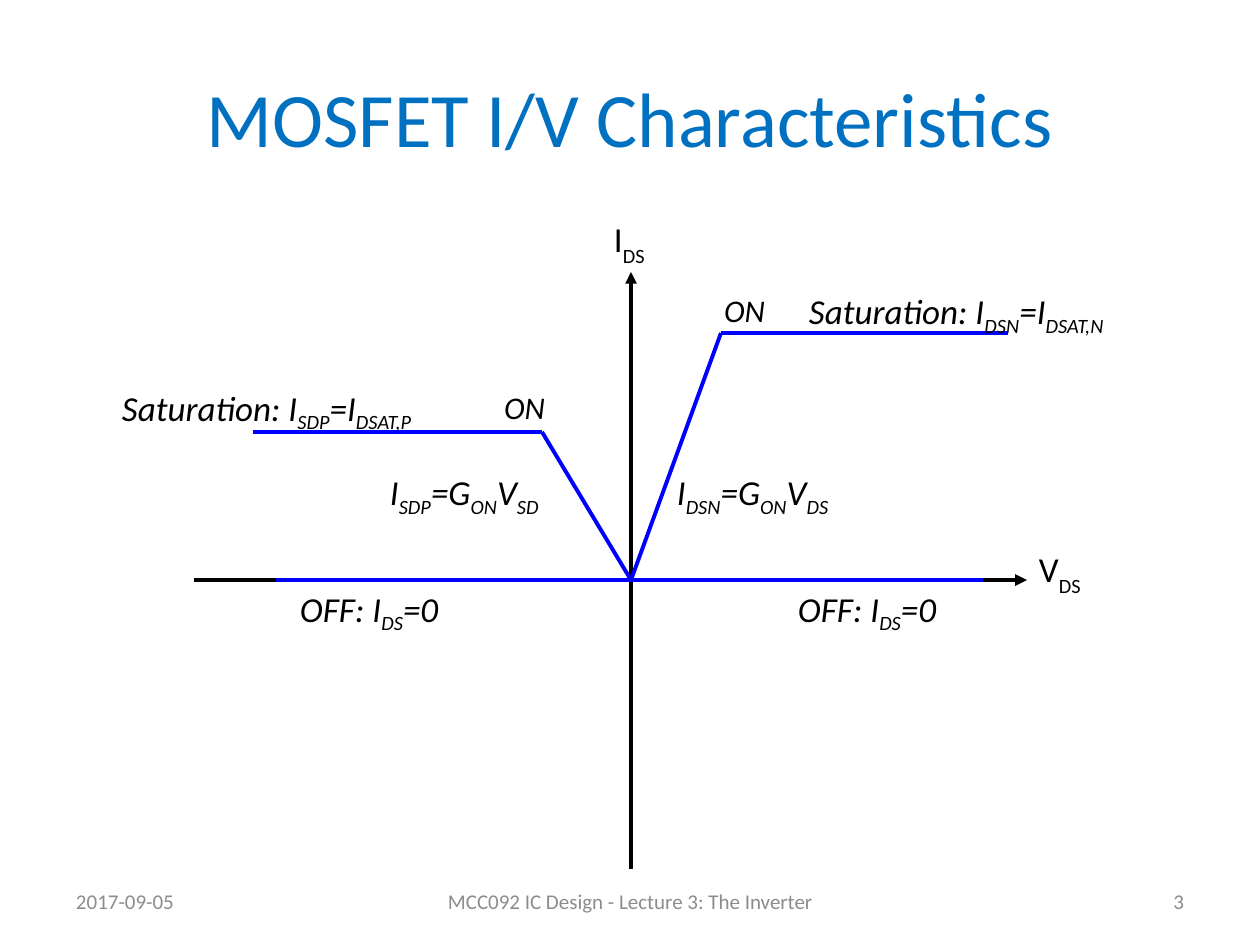
from lxml import etree
from pptx import Presentation, util as u
from pptx.dml.color import RGBColor
from pptx.enum import shapes, text
from pptx.oxml.ns import qn

PX = 914400 / 126
COLORS = {"title": "0070C0", "footer": "8C8C8C", "axis": "000000", "curve": "0000FF", "label": "000000"}
LEFT, CENTER, RIGHT = text.PP_ALIGN.LEFT, text.PP_ALIGN.CENTER, text.PP_ALIGN.RIGHT

ORIGIN = (631, 580)
N_KNEE = (721, 333)
P_KNEE = (542, 432)
AXES = [((631, 869), (631, 272)), ((194, 580), (1027, 580))]
CURVES = [
    (ORIGIN, N_KNEE), (N_KNEE, (1008, 333)), (ORIGIN, (983, 580)),
    (ORIGIN, P_KNEE), (P_KNEE, (253, 432)), (ORIGIN, (276, 580)),
]

TITLE = ("MOSFET I/V Characteristics", (63, 38, 1134, 158))
FOOTERS = [
    ("2017-09-05", (63, 876, 294, 50), LEFT),
    ("MCC092 IC Design - Lecture 3: The Inverter", (431, 876, 399, 50), CENTER),
    ("3", (903, 876, 294, 50), RIGHT),
]
# Every second part between bars is a subscript.
AXIS_NAMES = [("V|DS", (1031, 544, 88, 64)), ("I|DS", (606, 214, 81, 98))]
REGIONS = [
    ("I|DSN|=G|ON|V|DS", (669, 467, 241, 49)),
    ("I|SDP|=G|ON|V|SD", (382, 467, 241, 49)),
    ("Saturation: I|DSN|=I|DSAT,N", (801, 286, 433, 77)),
    ("Saturation: I|SDP|=I|DSAT,P", (114, 382, 433, 77)),
    ("OFF: I|DS|=0", (790, 583, 194, 77)),
    ("OFF: I|DS|=0", (292, 583, 194, 77)),
]
ON_MARKS = [("ON", (711, 285, 67, 50)), ("ON", (491, 382, 67, 50))]


def px(value):
    return u.Emu(round(value * PX))


def add_text(slide, words, box, size=20, color="label", italic=False, align=LEFT,
             anchor=text.MSO_ANCHOR.TOP, inset=(8, 4), wrap=True, subscript=-25):
    frame = slide.shapes.add_textbox(*map(px, box)).text_frame
    frame.word_wrap = wrap
    frame.vertical_anchor = anchor
    frame.margin_left = frame.margin_right = px(inset[0])
    frame.margin_top = frame.margin_bottom = px(inset[1])
    paragraph = frame.paragraphs[0]
    paragraph.alignment = align
    for index, part in enumerate(words.split("|")):
        run = paragraph.add_run()
        run.text = part
        run.font.name = "Calibri"
        run.font.size = u.Pt(size)
        run.font.italic = italic
        run.font.color.rgb = RGBColor.from_string(COLORS[color])
        if index % 2:
            run.font._element.set("baseline", str(subscript * 1000))


def add_line(slide, start, end, color, arrow=False):
    line = slide.shapes.add_connector(shapes.MSO_CONNECTOR.STRAIGHT, *map(px, start + end))
    line.line.width = u.Pt(2.25)
    line.line.color.rgb = RGBColor.from_string(COLORS[color])
    if arrow:
        etree.SubElement(line.line._get_or_add_ln(), qn("a:tailEnd"), type="triangle")
    etree.SubElement(line._element.spPr, qn("a:effectLst"))


def main():
    deck = Presentation()
    deck.slide_width, deck.slide_height = px(1260), px(945)
    slide = deck.slides.add_slide(deck.slide_layouts[6])

    middle = {"anchor": text.MSO_ANCHOR.MIDDLE, "inset": (13, 6)}
    add_text(slide, *TITLE, size=44, color="title", align=CENTER, **middle)
    for words, box, align in FOOTERS:
        add_text(slide, words, box, size=12, color="footer", align=align, **middle)

    for start, end in AXES:
        add_line(slide, start, end, "axis", arrow=True)
    for start, end in CURVES:
        add_line(slide, start, end, "curve")

    for words, box in AXIS_NAMES:
        add_text(slide, words, box, subscript=-30)
    for words, box in REGIONS:
        add_text(slide, words, box, italic=True)
    for words, box in ON_MARKS:
        add_text(slide, words, box, size=18, italic=True, inset=(13, 6), wrap=False)

    deck.save("out.pptx")


if __name__ == "__main__":
    main()
